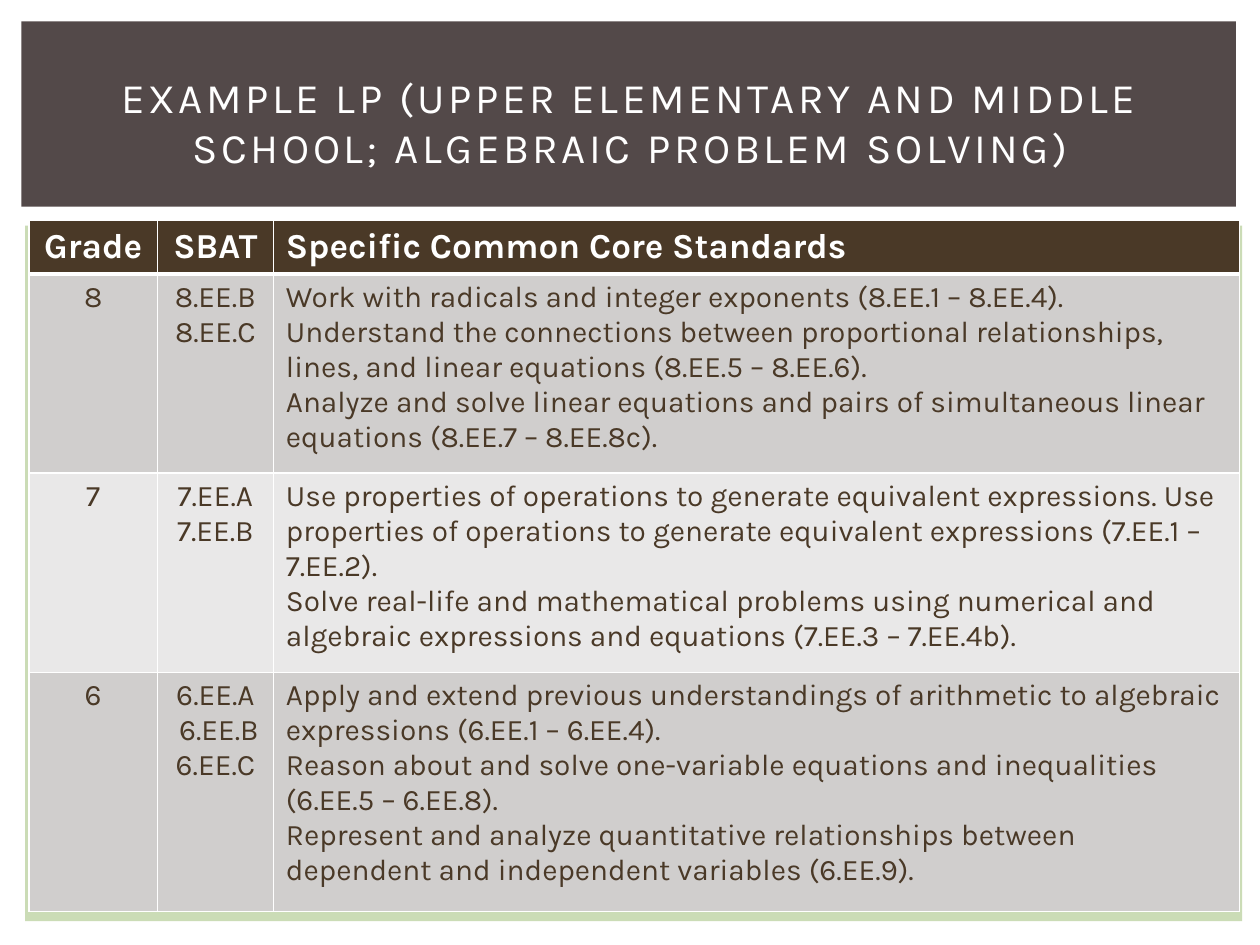
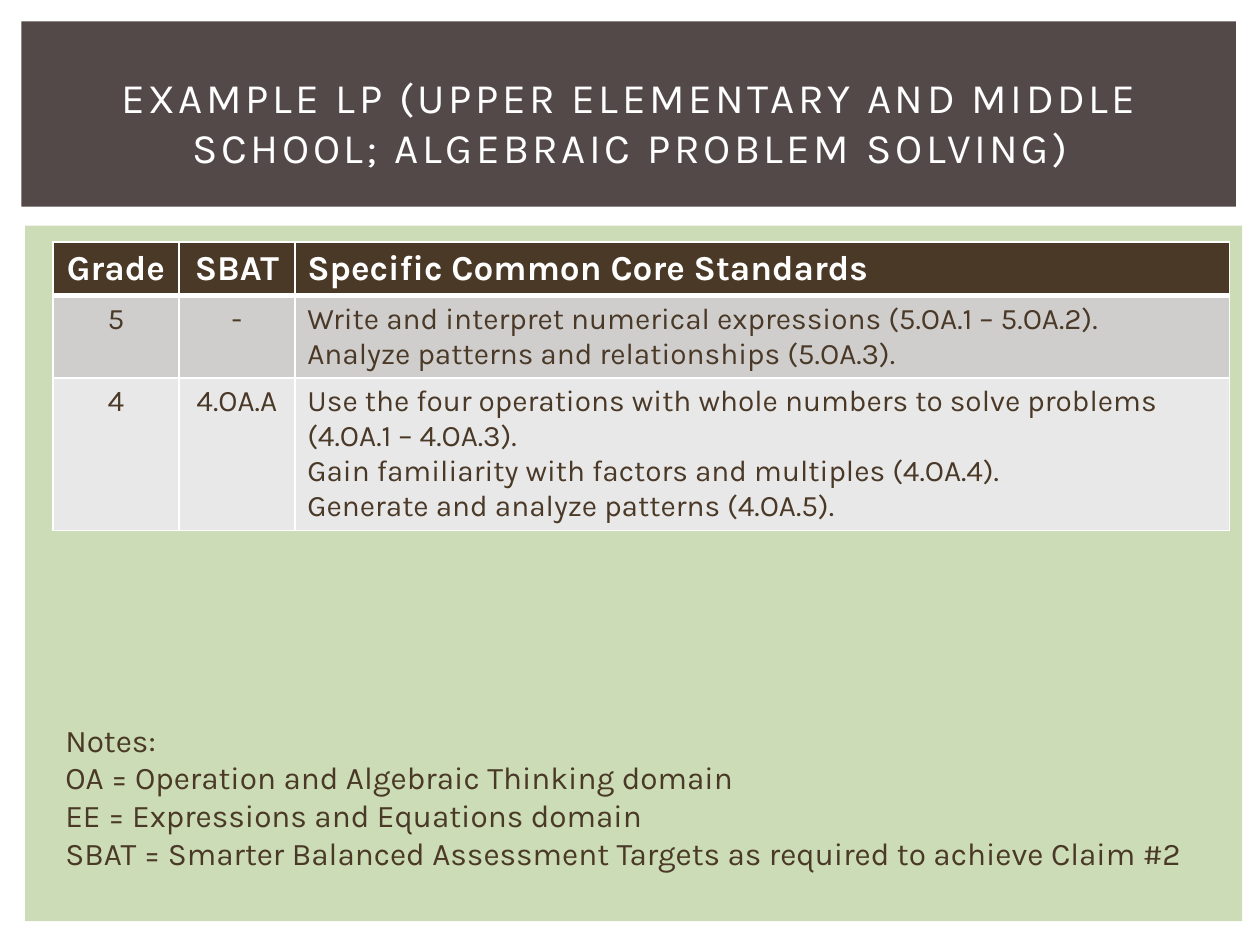
from dataclasses import dataclass

from lxml import etree
from pptx import Presentation
from pptx.dml.color import RGBColor
from pptx.enum.shapes import MSO_SHAPE
from pptx.enum.text import MSO_ANCHOR, MSO_AUTO_SIZE, PP_ALIGN
from pptx.oxml.ns import qn
from pptx.util import Inches, Pt

RECTANGLE = MSO_SHAPE.RECTANGLE
MIDDLE = MSO_ANCHOR.MIDDLE
FIXED_SIZE = MSO_AUTO_SIZE.NONE
LEFT, CENTER = PP_ALIGN.LEFT, PP_ALIGN.CENTER

# The slide is a grid of 100 columns and 75 rows with square cells
COLUMNS, ROWS = 100, 75
CELL = Inches(10) / COLUMNS
TITLE_ONLY = 5


@dataclass(frozen=True)
class Theme:
    font: str = "Karla"
    white: str = "FFFFFF"
    brown: str = "4A3927"
    title_band: str = "534949"
    content_panel: str = "CBDCB6"
    row_fills: tuple = ("D0CECD", "E9E8E8")
    title_size: int = 24
    header_size: int = 20
    legend_size: int = 18
    body_size: int = 17
    title_spacing: int = 200  # hundredths of a point
    rule: int = 1
    header_rule: int = 3


THEME = Theme()
TITLE_TEXT = "EXAMPLE LP (UPPER ELEMENTARY AND MIDDLE SCHOOL; ALGEBRAIC PROBLEM SOLVING)"
TITLE_FORMAT = dict(size=THEME.title_size, color=THEME.white, bold=False)
HEADER_FORMAT = dict(size=THEME.header_size, color=THEME.white, bold=True)
BODY_FORMAT = dict(size=THEME.body_size, color=THEME.brown, bold=False)
LEGEND_FORMAT = dict(size=THEME.legend_size, color=THEME.brown, bold=False)

# Every cell is a list of paragraphs
HEADER = [["Grade"], ["SBAT"], ["Specific Common Core Standards"]]
COLUMN_ALIGNMENTS = (CENTER, CENTER, LEFT)

MIDDLE_SCHOOL = [
    [["8"], ["8.EE.B", "8.EE.C"], [
        "Work with radicals and integer exponents (8.EE.1 – 8.EE.4).",
        "Understand the connections between proportional relationships, "
        "lines, and linear equations (8.EE.5 – 8.EE.6).",
        "Analyze and solve linear equations and pairs of simultaneous "
        "linear equations (8.EE.7 – 8.EE.8c)."]],
    [["7"], ["7.EE.A", "7.EE.B"], [
        "Use properties of operations to generate equivalent expressions. "
        "Use properties of operations to generate equivalent expressions "
        "(7.EE.1 – 7.EE.2).",
        "Solve real-life and mathematical problems using numerical and "
        "algebraic expressions and equations (7.EE.3 – 7.EE.4b)."]],
    [["6"], ["6.EE.A", " 6.EE.B", "6.EE.C"], [
        "Apply and extend previous understandings of arithmetic to "
        "algebraic expressions (6.EE.1 – 6.EE.4).",
        "Reason about and solve one-variable equations and inequalities "
        "(6.EE.5 – 6.EE.8).",
        "Represent and analyze quantitative relationships between "
        "dependent and independent variables (6.EE.9)."]],
]

UPPER_ELEMENTARY = [
    [["5"], ["-"], [
        "Write and interpret numerical expressions (5.OA.1 – 5.OA.2).",
        "Analyze patterns and relationships (5.OA.3)."]],
    [["4"], ["4.OA.A"], [
        "Use the four operations with whole numbers to solve problems "
        "(4.OA.1 – 4.OA.3).",
        "Gain familiarity with factors and multiples (4.OA.4).",
        "Generate and analyze patterns (4.OA.5)."]],
]

LEGEND = [
    "Notes:",
    "OA = Operation and Algebraic Thinking domain",
    "EE = Expressions and Equations domain",
    "SBAT = Smarter Balanced Assessment Targets as required to achieve Claim #2",
]


def grid(*cells):
    """Turn grid columns or rows into lengths."""
    return [round(count * CELL) for count in cells]


def write(frame, lines, format_values, alignment=LEFT):
    """Fill a text frame with one formatted paragraph per line."""
    for index, line in enumerate(lines):
        para = frame.paragraphs[0] if index == 0 else frame.add_paragraph()
        para.alignment = alignment
        span = para.add_run()
        span.text = line
        font_values = dict(name=THEME.font, size=Pt(format_values["size"]),
                           bold=format_values["bold"])
        for name, value in font_values.items():
            setattr(span.font, name, value)
        span.font.color.rgb = RGBColor.from_string(format_values["color"])


def add_layout_band(page, layout, place, color):
    """Draw a plain rectangle and hand it to the layout all pages share."""
    band = page.shapes.add_shape(RECTANGLE, *grid(*place))
    band.shadow.inherit = False
    band.fill.solid()
    band.fill.fore_color.rgb = RGBColor.from_string(color)
    band.line.fill.background()
    layout.shapes._spTree.append(band._element)


def set_title(page):
    title = page.shapes.title
    sides = ("left", "top", "width", "height")
    for name, value in zip(sides, grid(4.2, 3.9, 91.7, 11.5)):
        setattr(title, name, value)
    frame = title.text_frame
    frame.auto_size = FIXED_SIZE
    frame.vertical_anchor = MIDDLE
    write(frame, [TITLE_TEXT], TITLE_FORMAT, CENTER)
    span = frame.paragraphs[0].runs[0]
    span.font._element.set("spc", str(THEME.title_spacing))


def set_borders(cell, row_index):
    """Rule all four sides, with a thick rule under the header row."""
    properties = cell._tc.get_or_add_tcPr()
    thick_side = {0: "lnB", 1: "lnT"}.get(row_index)
    for side in ("lnL", "lnR", "lnT", "lnB"):
        width = THEME.header_rule if side == thick_side else THEME.rule
        line = etree.SubElement(properties, qn(f"a:{side}"), w=str(Pt(width)))
        fill = etree.SubElement(line, qn("a:solidFill"))
        etree.SubElement(fill, qn("a:srgbClr"), val=THEME.white)


def add_standards_table(page, left, top, widths, heights, standards):
    content = [HEADER] + standards
    place = grid(left, top, sum(widths), sum(heights))
    table = page.shapes.add_table(len(content), len(HEADER), *place).table
    for column, width in zip(table.columns, grid(*widths)):
        column.width = width
    for row, height in zip(table.rows, grid(*heights)):
        row.height = height
    for row_index, row_content in enumerate(content):
        is_header = row_index == 0
        format_values = HEADER_FORMAT if is_header else BODY_FORMAT
        color = THEME.brown if is_header else THEME.row_fills[(row_index - 1) % 2]
        for column_index, lines in enumerate(row_content):
            cell = table.cell(row_index, column_index)
            set_borders(cell, row_index)
            cell.fill.solid()
            cell.fill.fore_color.rgb = RGBColor.from_string(color)
            write(cell.text_frame, lines, format_values,
                  COLUMN_ALIGNMENTS[column_index])


def add_legend(page, place, lines):
    box = page.shapes.add_textbox(*grid(*place))
    box.text_frame.word_wrap = True
    write(box.text_frame, lines, LEGEND_FORMAT)


def main():
    deck = Presentation()
    deck.slide_width, deck.slide_height = grid(COLUMNS, ROWS)
    layout = deck.slide_layouts[TITLE_ONLY]
    pages = [deck.slides.add_slide(layout) for _ in range(2)]

    # Shared background panel, title band and title
    add_layout_band(pages[0], layout, (2, 17.9, 96.6, 55.2), THEME.content_panel)
    add_layout_band(pages[0], layout, (1.7, 1.7, 96.4, 14.7), THEME.title_band)
    for page in pages:
        set_title(page)

    # Grades 8 to 6
    add_standards_table(pages[0], 2.3, 17.5, (10.2, 9.2, 76.7),
                        (4.2, 15.8, 15.8, 19), MIDDLE_SCHOOL)

    # Grades 5 and 4, with the abbreviations explained
    add_standards_table(pages[1], 4.2, 19.2, (10, 9.2, 74.2),
                        (4.2, 6.5, 12.1), UPPER_ELEMENTARY)
    add_legend(pages[1], (4.2, 56.7, 91.7, 13.1), LEGEND)

    deck.save("out.pptx")


if __name__ == "__main__":
    main()
